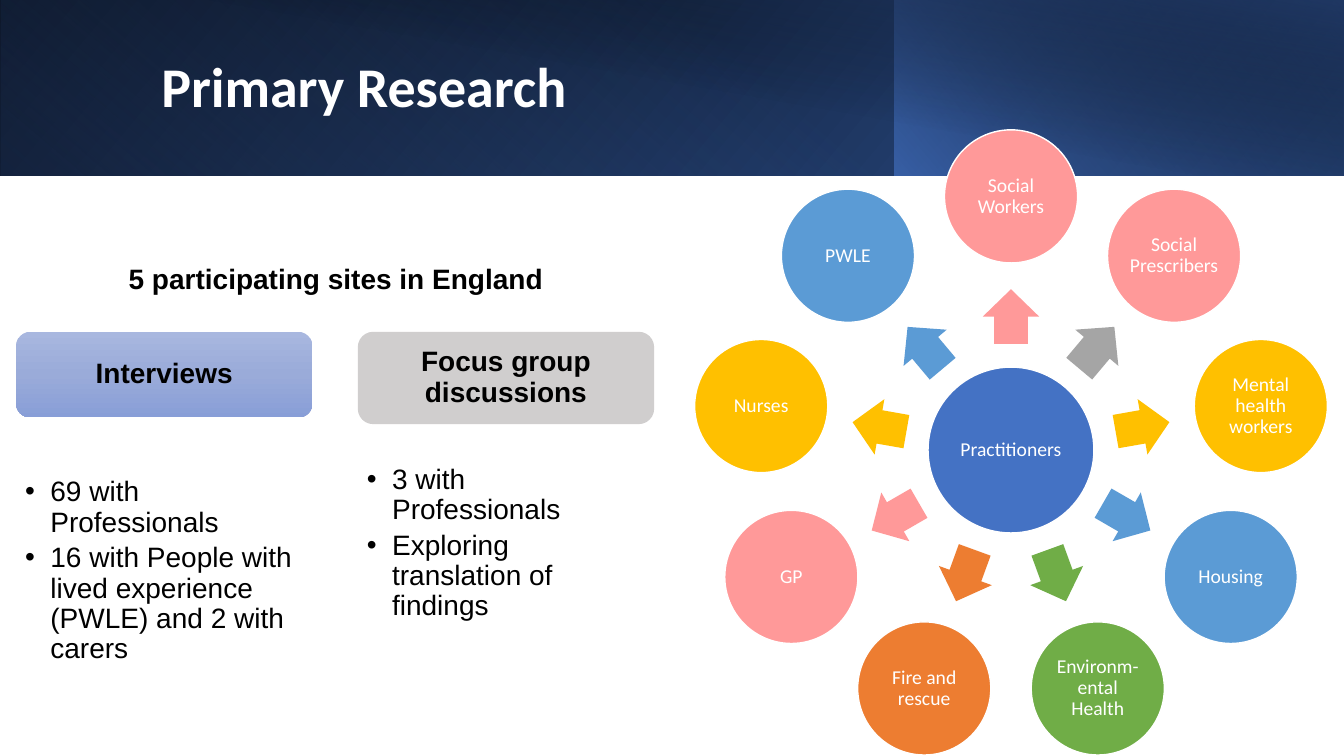
from math import cos, radians, sin

from lxml.etree import SubElement
from pptx import Presentation
from pptx.dml.color import RGBColor
from pptx.enum.shapes import MSO_SHAPE as Preset
from pptx.enum.text import MSO_ANCHOR as Anchor, PP_ALIGN as Align
from pptx.oxml.ns import qn
from pptx.util import Inches, Pt

# The slide is a grid of 160 square columns by 90 rows
COLUMNS, ROWS = 160, 90
CELL = Inches(7.5) / ROWS
BANNER_ROWS, BANNER_SPLIT = 20.9, 106.5

WHITE, BLACK = "FFFFFF", "000000"
PINK, GREY, GOLD, SKY = "FF9999", "A5A5A5", "FFC000", "5B9BD5"
GREEN, ORANGE, ROYAL = "70AD47", "ED7D31", "4472C4"

HEADING = {"name": "Calibri", "size": Pt(40), "bold": True}
STRONG = {"name": "Arial", "size": Pt(20), "bold": True}
BODY = {"name": "Arial", "size": Pt(20), "bold": False}
LABEL = {"name": "Calibri", "size": Pt(14), "bold": False}

# Clockwise from the top: label, circle colour, arrow colour
PRACTITIONERS = [
    ("Social Workers", PINK, PINK),
    ("Social Prescribers", PINK, GREY),
    ("Mental health workers", GOLD, GOLD),
    ("Housing", SKY, SKY),
    ("Environm-ental Health", GREEN, GREEN),
    ("Fire and rescue", ORANGE, ORANGE),
    ("GP", PINK, PINK),
    ("Nurses", GOLD, GOLD),
    ("PWLE", SKY, SKY),
]
HUB_X, HUB_Y = 120.36, 53.58
HUB_SIZE, CIRCLE_SIZE = 19.75, 15.85
CIRCLE_RADIUS, ARROW_RADIUS = 30.2, 15.9
ARROW_LENGTH, ARROW_WIDTH = 6.5, 6.7

# Method cards: heading, fill, card rows, list top, list rows, points
INTERVIEW_STOPS = [(0, "A8B7DF", 100), (50, "9AABD9", 100), (100, "889ED7", 100)]
METHODS = [
    ("Interviews", INTERVIEW_STOPS, 10.2, 56.5, 22.6,
     ["69 with Professionals",
      "16 with People with lived experience (PWLE) and 2 with carers"]),
    ("Focus group discussions", "D0CECE", 11, 55, 19,
     ["3 with Professionals", "Exploring translation of findings"]),
]
CARD_LEFT, CARD_TOP, CARD_WIDTH, CARD_PITCH = 1.92, 39.5, 35.28, 40.68


def rgb(code):
    return RGBColor.from_string(code)


def cells(*counts):
    return [round(count * CELL) for count in counts]


def apply(target, values):
    for name, value in values.items():
        setattr(target, name, value)


def gradient(shape, stops, angle):
    """Fill with (position, colour, opacity) stops, all in percent."""
    properties = shape._element.spPr
    fill = SubElement(properties, qn("a:gradFill"), rotWithShape="1")
    properties.find(qn("a:prstGeom")).addnext(fill)
    stop_list = SubElement(fill, qn("a:gsLst"))
    for position, code, opacity in stops:
        stop = SubElement(stop_list, qn("a:gs"), pos=str(position * 1000))
        colour = SubElement(stop, qn("a:srgbClr"), val=code)
        SubElement(colour, qn("a:alpha"), val=str(opacity * 1000))
    SubElement(fill, qn("a:lin"), ang=str(angle * 60000), scaled="0")


def add_block(slide, preset, box, fill, angle=90, outline=None):
    block = slide.shapes.add_shape(preset, *cells(*box))
    block.shadow.inherit = False
    if isinstance(fill, str):
        block.fill.solid()
        block.fill.fore_color.rgb = rgb(fill)
    else:
        gradient(block, fill, angle)
    if outline:
        block.line.color.rgb = rgb(outline)
        block.line.width = Pt(1)
    else:
        block.line.fill.background()
    return block


def write(shape, lines, font, colour, align=Align.CENTER, anchor=Anchor.MIDDLE,
          insets=(0.02, 0.02, 0.02, 0.02), spacing=0.9, after=0):
    frame = shape.text_frame
    apply(frame, {"word_wrap": True, "vertical_anchor": anchor})
    sides = ("margin_left", "margin_top", "margin_right", "margin_bottom")
    apply(frame, dict(zip(sides, map(Inches, insets))))
    frame.text = "\n".join(lines)
    for paragraph in frame.paragraphs:
        apply(paragraph, {"alignment": align, "line_spacing": spacing,
                          "space_after": Pt(after), "space_before": Pt(0)})
        for run in paragraph.runs:
            apply(run.font, font)
            run.font.color.rgb = rgb(colour)


def add_bullets(shape):
    indent = Inches(0.25)
    for paragraph in shape.text_frame.paragraphs:
        properties = paragraph._p.get_or_add_pPr()
        properties.set("marL", str(indent))
        properties.set("indent", str(-indent))
        SubElement(properties, qn("a:buFont"), typeface="Arial")
        SubElement(properties, qn("a:buChar"), char="•")


def add_banner(slide):
    right = COLUMNS - BANNER_SPLIT
    # Left, width, stops, angle, rotation, mirrored
    layers = [
        (0, COLUMNS, [(0, BLACK, 100), (100, "2F5597", 100)], 140, 0, True),
        (0, BANNER_SPLIT, [(20, ROYAL, 0), (100, "203864", 55)], 230, 180, True),
        (BANNER_SPLIT, right, [(0, ROYAL, 66), (100, BLACK, 30)], 220, 0, True),
        (6, COLUMNS - 6, [(50, BLACK, 0), (99, "203864", 52)], 280, 0, False),
    ]
    for left, width, stops, angle, rotation, mirrored in layers:
        layer = add_block(slide, Preset.RECTANGLE,
                          (left, 0, width, BANNER_ROWS), stops, angle)
        layer.rotation = rotation
        if mirrored:
            layer._element.spPr.xfrm.set("flipH", "1")


def add_title(slide):
    title = slide.shapes.title
    slide.shapes._spTree.append(title._element)  # in front of the banner
    place = cells(18, 3.84, 129.84, 13.56)
    apply(title, dict(zip(("left", "top", "width", "height"), place)))
    write(title, ["Primary Research"], HEADING, WHITE, Align.LEFT,
          insets=(0.1, 0.05, 0.1, 0.05))


def add_circle(slide, x, y, size, label, colour):
    box = (x - size / 2, y - size / 2, size, size)
    circle = add_block(slide, Preset.OVAL, box, colour, outline=WHITE)
    write(circle, [label], LABEL, WHITE)


def add_arrow(slide, x, y, direction, colour):
    box = (x - ARROW_LENGTH / 2, y - ARROW_WIDTH / 2, ARROW_LENGTH, ARROW_WIDTH)
    arrow = add_block(slide, Preset.RIGHT_ARROW, box, colour)
    arrow.adjustments[0] = 0.6
    arrow.adjustments[1] = 0.5
    arrow.rotation = direction % 360


def add_practitioner_wheel(slide):
    add_circle(slide, HUB_X, HUB_Y, HUB_SIZE, "Practitioners", ROYAL)
    step = 360 / len(PRACTITIONERS)
    for index, (label, circle_colour, arrow_colour) in enumerate(PRACTITIONERS):
        direction = index * step - 90
        across, down = cos(radians(direction)), sin(radians(direction))
        add_arrow(slide, HUB_X + ARROW_RADIUS * across,
                  HUB_Y + ARROW_RADIUS * down, direction, arrow_colour)
        add_circle(slide, HUB_X + CIRCLE_RADIUS * across,
                   HUB_Y + CIRCLE_RADIUS * down, CIRCLE_SIZE, label, circle_colour)


def add_methods(slide):
    sites = slide.shapes.add_textbox(*cells(6, 30.6, 68, 5.3))
    write(sites, ["5 participating sites in England"], STRONG, BLACK,
          anchor=Anchor.TOP, insets=(0.1, 0.05, 0.1, 0.05), spacing=1, after=6)
    for index, (heading, fill, rows, top, list_rows, points) in enumerate(METHODS):
        left = CARD_LEFT + index * CARD_PITCH
        card = add_block(slide, Preset.ROUNDED_RECTANGLE,
                         (left, CARD_TOP, CARD_WIDTH, rows), fill)
        write(card, [heading], STRONG, BLACK, insets=(0.08,) * 4)
        findings = slide.shapes.add_textbox(*cells(left, top, CARD_WIDTH, list_rows))
        write(findings, points, BODY, BLACK, Align.LEFT, Anchor.TOP,
              insets=(0.09, 0.03, 0.16, 0.03), after=4)
        add_bullets(findings)


def main():
    deck = Presentation()
    deck.slide_width, deck.slide_height = cells(COLUMNS, ROWS)
    slide = deck.slides.add_slide(deck.slide_layouts[5])
    add_banner(slide)
    add_title(slide)
    add_practitioner_wheel(slide)
    add_methods(slide)
    deck.save("out.pptx")


if __name__ == "__main__":
    main()
